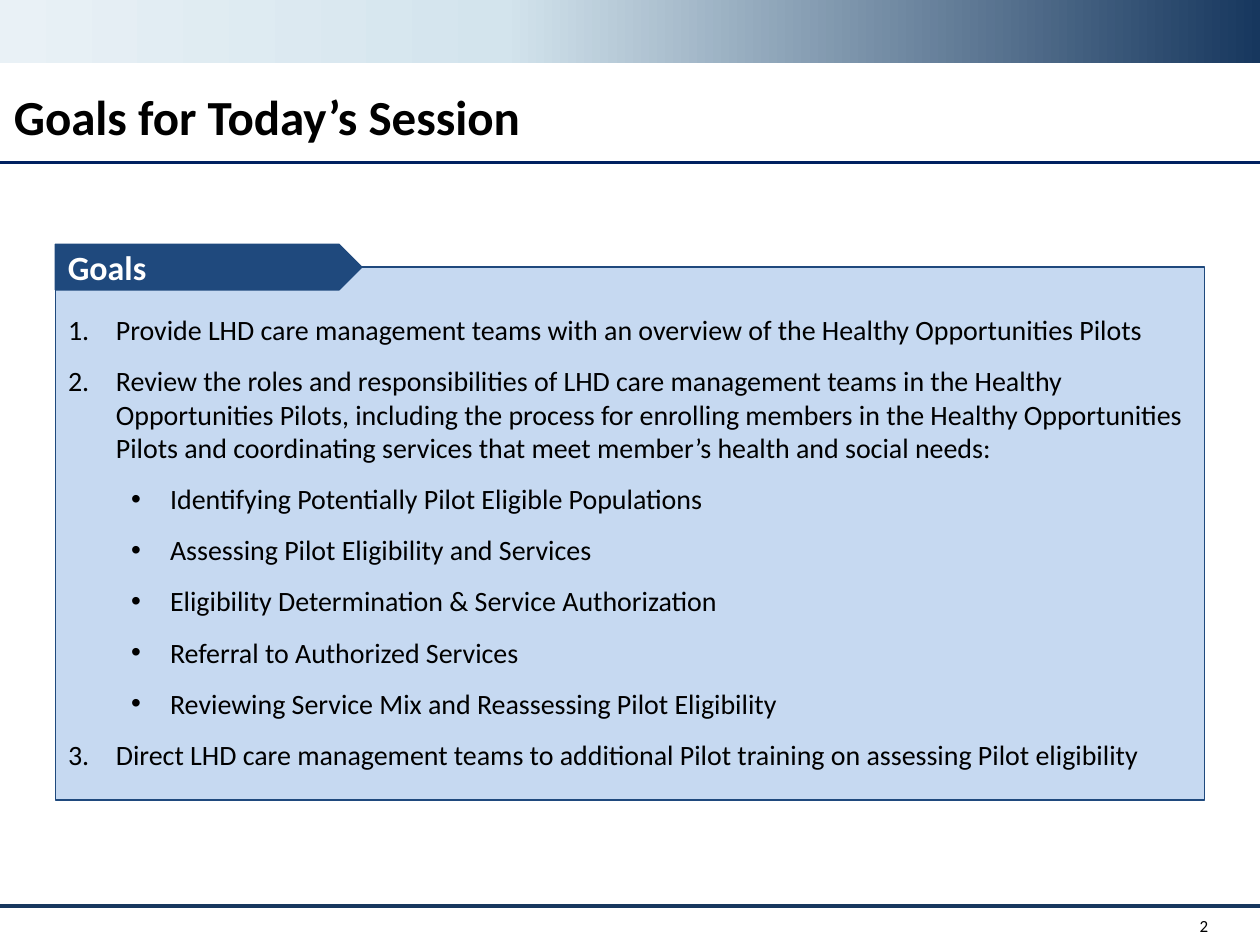
from copy import deepcopy
from dataclasses import dataclass

from lxml import etree
from pptx import Presentation
from pptx.dml.color import RGBColor
from pptx.enum import shapes, text
from pptx.oxml import ns
from pptx.util import Inches, Pt


@dataclass(frozen=True)
class Theme:
    font: str = "Calibri"
    ink: str = "000000"
    white: str = "FFFFFF"
    navy: str = "17375E"
    rule: str = "002060"
    accent: str = "1F497D"
    panel: str = "C6D9F1"
    band: tuple = ((0, "17375E"), (0.6, "D3E4ED"), (1, "E9F1F6"))
    title_size: float = 28
    label_size: float = 19.4
    body_size: float = 16
    number_size: float = 9.7


THEME = Theme()
GOALS = [
    (0, "Provide LHD care management teams with an overview of the Healthy Opportunities Pilots"),
    (0, "Review the roles and responsibilities of LHD care management teams in the Healthy "
        "Opportunities Pilots, including the process for enrolling members in the Healthy "
        "Opportunities Pilots and coordinating services that meet member’s health and social needs:"),
    (1, "Identifying Potentially Pilot Eligible Populations"),
    (1, "Assessing Pilot Eligibility and Services"),
    (1, "Eligibility Determination & Service Authorization"),
    (1, "Referral to Authorized Services"),
    (1, "Reviewing Service Mix and Reassessing Pilot Eligibility"),
    (0, "Direct LHD care management teams to additional Pilot training on assessing Pilot eligibility"),
]
LEVELS = [
    (0.38, -0.38, "buAutoNum", {"type": "arabicPeriod"}),
    (0.81, -0.31, "buChar", {"char": "•"}),
]


def color(value):
    return RGBColor.from_string(value)


def place(shape, box):
    shape.left, shape.top, shape.width, shape.height = map(Inches, box)


def set_font(paragraph, size, value, bold=False):
    font = paragraph.font
    font.name, font.size, font.bold = THEME.font, Pt(size), bold
    font.color.rgb = color(value)


def set_frame(shape, anchor, insets):
    frame = shape.text_frame
    frame.auto_size = text.MSO_AUTO_SIZE.NONE
    frame.word_wrap = True
    frame.vertical_anchor = anchor
    frame.margin_left, frame.margin_top, frame.margin_right, frame.margin_bottom = map(Inches, insets)
    return frame


def paint(shape, fill):
    shape.fill.solid()
    shape.fill.fore_color.rgb = color(fill)
    shape.line.color.rgb = color(THEME.accent)
    shape.line.width = Pt(1)


def add_rule(slide, top, value, weight):
    rule = slide.shapes.add_connector(
        shapes.MSO_CONNECTOR.STRAIGHT, 0, Inches(top), Inches(10), Inches(top))
    rule.line.color.rgb = color(value)
    rule.line.width = Pt(weight)
    etree.SubElement(rule._element.spPr, ns.qn("a:effectLst"))


def add_band(slide, box):
    band = slide.shapes.add_shape(shapes.MSO_SHAPE.RECTANGLE, *map(Inches, box))
    band.shadow.inherit = False
    band.line.fill.background()
    band.fill.gradient()
    band.fill.gradient_angle = 180
    stop_list = next(band._element.spPr.iter(ns.qn("a:gsLst")))
    stop_list.append(deepcopy(stop_list[0]))
    for stop, (position, value) in zip(band.fill.gradient_stops, THEME.band):
        stop.position = position
        stop.color.rgb = color(value)


def add_title(slide, box):
    title = slide.shapes.title
    place(title, box)
    frame = set_frame(title, text.MSO_ANCHOR.TOP, (0.11, 0.06, 0.11, 0.06))
    frame.text = "Goals for Today’s Session"
    paragraph = frame.paragraphs[0]
    paragraph.alignment = text.PP_ALIGN.LEFT
    paragraph.line_spacing = 0.9
    set_font(paragraph, THEME.title_size, THEME.ink, bold=True)


def add_goals(slide, box):
    left, top, width, height = box
    panel = slide.placeholders[1]
    place(panel, box)
    paint(panel, THEME.panel)
    frame = set_frame(panel, text.MSO_ANCHOR.TOP, (0.1, 0.36, 0.1, 0.05))
    for index, (level, wording) in enumerate(GOALS):
        paragraph = frame.add_paragraph() if index else frame.paragraphs[0]
        paragraph.text = wording
        paragraph.level = level
        paragraph.alignment = text.PP_ALIGN.LEFT
        paragraph.space_before, paragraph.space_after = Pt(0), Pt(10)
        margin, indent, bullet, attributes = LEVELS[level]
        properties = paragraph._p.get_or_add_pPr()
        properties.set("marL", str(Inches(margin)))
        properties.set("indent", str(Inches(indent)))
        etree.SubElement(properties, ns.qn("a:buFont"), typeface="Arial" if level else "+mj-lt")
        etree.SubElement(properties, ns.qn(f"a:{bullet}"), attributes)
        set_font(paragraph, THEME.body_size, THEME.ink)

    tab_height = 0.36
    label = slide.shapes.add_shape(
        shapes.MSO_SHAPE.PENTAGON,
        *map(Inches, (left, top - tab_height / 2, 2.43, tab_height)))
    label.shadow.inherit = False
    paint(label, THEME.accent)
    frame = set_frame(label, text.MSO_ANCHOR.MIDDLE, (0.1, 0.05, 0.1, 0.05))
    frame.text = "Goals"
    frame.paragraphs[0].alignment = text.PP_ALIGN.LEFT
    set_font(frame.paragraphs[0], THEME.label_size, THEME.white, bold=True)


def add_slide_number(slide, box):
    number = slide.shapes.add_textbox(*map(Inches, box))
    frame = set_frame(number, text.MSO_ANCHOR.MIDDLE, (0.11, 0.06, 0.11, 0.06))
    paragraph = frame.paragraphs[0]
    paragraph.text = "2"
    paragraph.alignment = text.PP_ALIGN.RIGHT
    set_font(paragraph, THEME.number_size, THEME.ink)


def main():
    presentation = Presentation()
    presentation.slide_width, presentation.slide_height = Inches(10), Inches(7.5)
    slide = presentation.slides.add_slide(presentation.slide_layouts[1])
    slide.background.fill.solid()
    slide.background.fill.fore_color.rgb = color(THEME.white)
    add_band(slide, (0, 0, 10, 0.5))
    add_rule(slide, 7.19, THEME.navy, 2.25)
    add_rule(slide, 1.29, THEME.rule, 2)
    add_title(slide, (0, 0.68, 9.7, 0.6))
    add_slide_number(slide, (9.08, 7.19, 0.62, 0.31))
    add_goals(slide, (0.44, 2.12, 9.12, 4.23))
    presentation.save("out.pptx")


if __name__ == "__main__":
    main()
